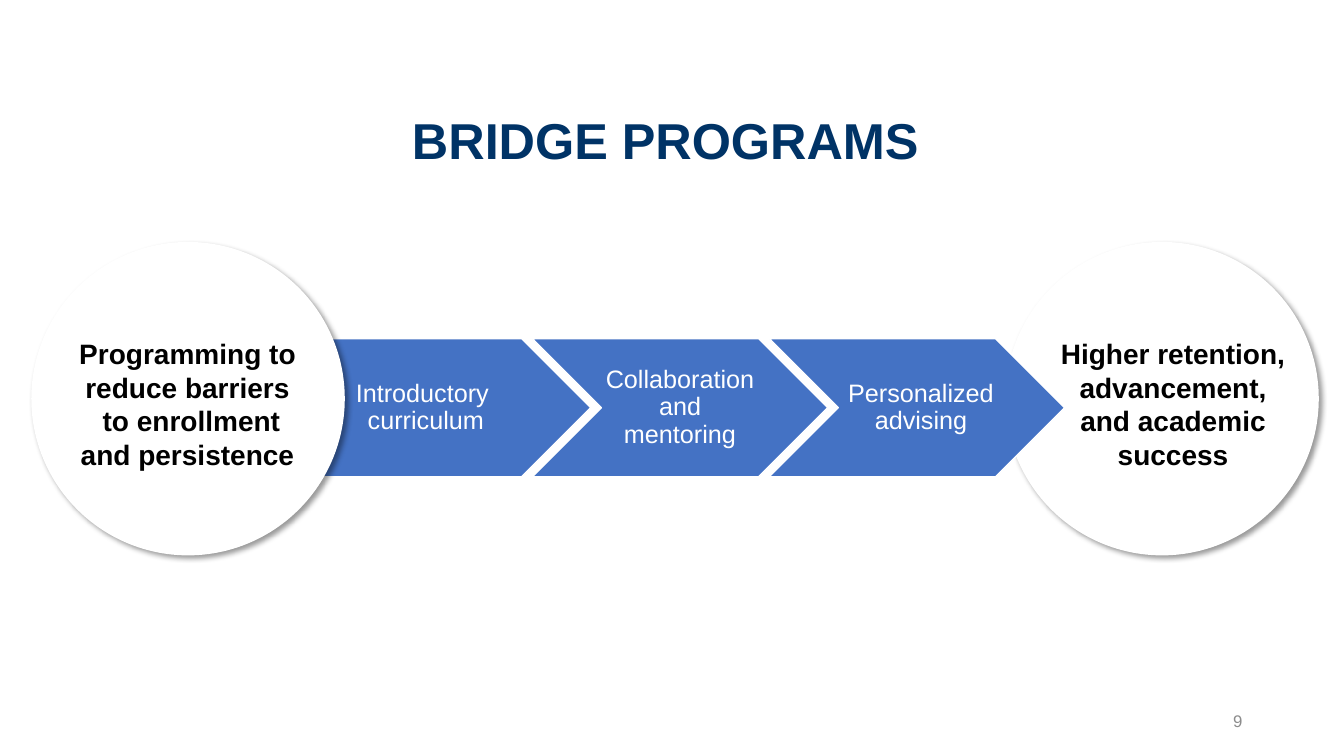
from lxml.etree import SubElement
from pptx import Presentation
from pptx.dml.color import RGBColor
from pptx.enum.shapes import MSO_SHAPE
from pptx.enum.text import MSO_ANCHOR, PP_ALIGN
from pptx.oxml.ns import qn
from pptx.util import Inches, Pt

COLORS = {
    "title": "003366",
    "arrow": "4472C4",
    "white": "FFFFFF",
    "black": "000000",
    "number": "8C8C8C",
}


def color(name):
    return RGBColor.from_string(COLORS[name])


def write_text(frame, text, size=18, ink="black", bold=False,
               align=PP_ALIGN.CENTER, anchor=MSO_ANCHOR.TOP,
               spacing=None, insets=None):
    """Fill a text frame; newline starts a paragraph, \\v breaks a line."""
    frame.text = text
    frame.word_wrap = True
    frame.vertical_anchor = anchor
    if insets is not None:
        (frame.margin_left, frame.margin_top,
         frame.margin_right, frame.margin_bottom) = map(Inches, insets)
    for para in frame.paragraphs:
        para.alignment = align
        if spacing:
            para.line_spacing = spacing
        for span in para.runs:
            span.font.name = "Arial"
            span.font.size = Pt(size)
            span.font.bold = bold
            span.font.color.rgb = color(ink)


class BridgeSlide:
    def __init__(self, deck):
        self.page = deck.slides.add_slide(deck.slide_layouts[5])

    def title(self, text, *place):
        box = self.page.shapes.title
        box.left, box.top, box.width, box.height = map(Inches, place)
        write_text(box.text_frame, text, size=36, ink="title", bold=True,
                   anchor=MSO_ANCHOR.MIDDLE, spacing=0.9)

    def label(self, text, *place, **style):
        box = self.page.shapes.add_textbox(*map(Inches, place))
        write_text(box.text_frame, text, **style)

    def shape(self, kind, place, fill):
        shape = self.page.shapes.add_shape(kind, *map(Inches, place))
        shape.shadow.inherit = False
        shape.fill.solid()
        shape.fill.fore_color.rgb = color(fill)
        return shape

    def circle(self, left, top, size):
        circle = self.shape(MSO_SHAPE.OVAL, (left, top, size, size), "white")
        circle.line.fill.background()
        # Soft shadow to the lower right
        effects = circle._element.spPr.find(qn("a:effectLst"))
        shadow = SubElement(effects, qn("a:outerShdw"), blurRad=str(Pt(4)),
                            dist=str(Pt(3)), dir="2700000", algn="tl",
                            rotWithShape="0")
        tint = SubElement(shadow, qn("a:srgbClr"), val=COLORS["black"])
        SubElement(tint, qn("a:alpha"), val="40000")

    def arrow(self, kind, text, left, top, width, height, inset):
        arrow = self.shape(kind, (left, top, width, height), "arrow")
        arrow.line.color.rgb = color("white")
        arrow.line.width = Pt(1)
        write_text(arrow.text_frame, text, ink="white", spacing=0.9,
                   anchor=MSO_ANCHOR.MIDDLE, insets=(inset, 0, 0, 0))


def main():
    deck = Presentation()
    deck.slide_width, deck.slide_height = Inches(13.33), Inches(7.5)
    slide = BridgeSlide(deck)
    slide.title("BRIDGE PROGRAMS", 0, 0.7, 13.2, 1.45)

    # Outcome circle lies behind the chain of arrows
    slide.circle(9.97, 2.4, 3.11)

    # Chain of program steps
    steps = [
        (MSO_SHAPE.PENTAGON, "Introductory \vcurriculum", 0),
        (MSO_SHAPE.CHEVRON, "Collaboration and mentoring", 0),
        (MSO_SHAPE.CHEVRON, "Personalized advising", 0.08),
    ]
    for index, (kind, text, inset) in enumerate(steps):
        slide.arrow(kind, text, 2.93 + 2.35 * index, 3.36, 2.93, 1.37, inset)

    # Starting circle lies in front of it
    slide.circle(0.31, 2.4, 3.11)

    # Circle labels
    slide.label("Programming to reduce barriers\n to enrollment and persistence",
                0.59, 3.29, 2.54, 1.45, size=20, bold=True)
    slide.label("Higher retention, advancement, and academic success",
                10.37, 3.29, 2.53, 1.45, size=20, bold=True)

    # Slide number
    slide.label("9", 9.42, 6.95, 3, 0.4, size=12, ink="number",
                align=PP_ALIGN.RIGHT, anchor=MSO_ANCHOR.MIDDLE)

    deck.save("out.pptx")


if __name__ == "__main__":
    main()
